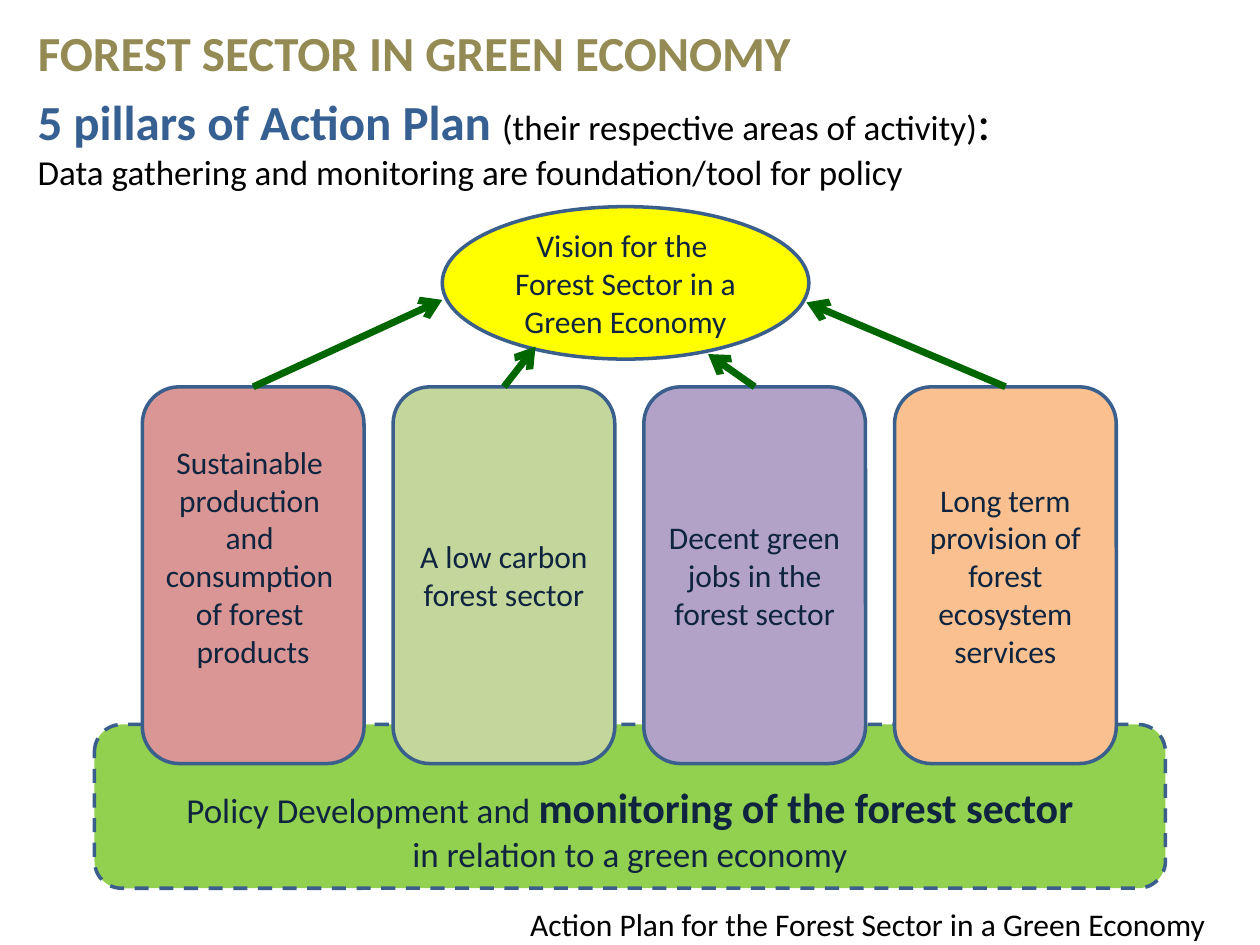
from lxml import etree
from pptx import Presentation
from pptx.dml.color import RGBColor
from pptx.enum.dml import MSO_LINE
from pptx.enum.shapes import MSO_CONNECTOR, MSO_SHAPE
from pptx.enum.text import MSO_ANCHOR, MSO_AUTO_SIZE, PP_ALIGN
from pptx.oxml.ns import qn
from pptx.util import Inches, Pt

LEFT, CENTER = PP_ALIGN.LEFT, PP_ALIGN.CENTER
TOP, MIDDLE = MSO_ANCHOR.TOP, MSO_ANCHOR.MIDDLE
STRAIGHT = MSO_CONNECTOR.STRAIGHT
ROUNDED, OVAL = MSO_SHAPE.ROUNDED_RECTANGLE, MSO_SHAPE.OVAL
FONT = "Calibri"
TITLE_ONLY = 5

COLORS = {
    "title": "948A54", "subtitle": "376092", "black": "000000",
    "navy": "0F243E", "outline": "3A5F8C", "arrow": "006600",
    "vision": "FFFF00", "foundation": "92D050",
    "production": "D99694", "carbon": "C3D69B",
    "jobs": "B3A2C7", "ecosystem": "FAC090",
}

# Pillar grid, in inches
PILLAR_LEFT, PILLAR_TOP = 1.13, 3.07
PILLAR_WIDTH, PILLAR_HEIGHT = 1.76, 2.99
PILLAR_PITCH = 1.99

# Colour, lines of text, arrow tip on the vision ellipse, bottom inset
PILLARS = [
    ("production", ["Sustainable ", "production ", "and ", "consumption ",
                    "of forest ", "products"], (3.51, 2.38), 0.35),
    ("carbon", ["A low carbon", "forest sector"], (4.25, 2.75), 0.05),
    ("jobs", ["Decent green", "jobs in the", "forest sector"],
     (5.62, 2.81), 0.05),
    ("ecosystem", ["Long term", "provision of", "forest", "ecosystem",
                   "services"], (6.4, 2.4), 0.05),
]


def rgb(name):
    return RGBColor.from_string(COLORS[name])


def write(frame, lines, size=18, color="navy", bold=False, align=CENTER,
          anchor=MIDDLE, insets=(0.1, 0.05, 0.1, 0.05)):
    """Each line is a string or a list of (text, overrides) runs."""
    frame.word_wrap = True
    frame.auto_size = MSO_AUTO_SIZE.NONE
    frame.vertical_anchor = anchor
    (frame.margin_left, frame.margin_top,
     frame.margin_right, frame.margin_bottom) = map(Inches, insets)
    for index, line in enumerate(lines):
        paragraph = frame.paragraphs[0] if index == 0 else frame.add_paragraph()
        paragraph.alignment = align
        for text, style in [(line, {})] if isinstance(line, str) else line:
            run = paragraph.add_run()
            run.text = text
            run.font.name = FONT
            run.font.size = Pt(style.get("size", size))
            run.font.bold = style.get("bold", bold)
            run.font.color.rgb = rgb(style.get("color", color))


def add_label(slide, box, lines, **style):
    label = slide.shapes.add_textbox(*map(Inches, box))
    write(label.text_frame, lines, align=LEFT, anchor=TOP, **style)


def add_block(slide, preset, box, fill, lines, **style):
    block = slide.shapes.add_shape(preset, *map(Inches, box))
    block.shadow.inherit = False
    block.fill.solid()
    block.fill.fore_color.rgb = rgb(fill)
    block.line.color.rgb = rgb("outline")
    block.line.width = Pt(2)
    write(block.text_frame, lines, **style)
    return block


def add_arrow(slide, pillar, tip):
    x, y = map(Inches, tip)
    arrow = slide.shapes.add_connector(STRAIGHT, 0, 0, x, y)
    arrow.begin_connect(pillar, 0)
    arrow.line.color.rgb = rgb("arrow")
    arrow.line.width = Pt(4)
    etree.SubElement(arrow.line._get_or_add_ln(), qn("a:tailEnd"), type="arrow")
    etree.SubElement(arrow._element.spPr, qn("a:effectLst"))


def main():
    deck = Presentation()
    deck.slide_width, deck.slide_height = Inches(10), Inches(7.5)
    slide = deck.slides.add_slide(deck.slide_layouts[TITLE_ONLY])

    # Heading
    title = slide.shapes.title
    title.left, title.top, title.width, title.height = map(
        Inches, (0.2, 0.13, 9.69, 0.57))
    write(title.text_frame, ["FOREST SECTOR IN GREEN ECONOMY"], size=28,
          color="title", bold=True, align=LEFT, anchor=TOP)
    add_label(slide, (0.2, 0.68, 9.69, 0.91), [
        [("5 pillars of Action Plan ",
          {"size": 28, "color": "subtitle", "bold": True}),
         ("(their respective areas of activity)", {}),
         (":", {"size": 28})],
        "Data gathering and monitoring are foundation/tool for policy",
    ], size=20, color="black")

    # Foundation and vision
    foundation = add_block(slide, ROUNDED, (0.75, 5.75, 8.5, 1.3), "foundation", [
        [("Policy Development and ", {}),
         ("monitoring of the forest sector", {"size": 24, "bold": True})],
        "in relation to a green economy",
    ], size=20, insets=(0.1, 0.39, 0.1, 0.05))
    foundation.line.dash_style = MSO_LINE.DASH
    add_block(slide, OVAL, (3.51, 1.64, 2.91, 1.21), "vision",
              ["Vision for the ", "Forest Sector in a Green Economy"],
              insets=(0, 0, 0, 0))

    # Pillars, each pointing to the vision
    for column, (fill, lines, tip, bottom) in enumerate(PILLARS):
        box = (PILLAR_LEFT + column * PILLAR_PITCH, PILLAR_TOP,
               PILLAR_WIDTH, PILLAR_HEIGHT)
        pillar = add_block(slide, ROUNDED, box, fill, lines,
                           insets=(0.1, 0.05, 0.1, bottom))
        add_arrow(slide, pillar, tip)

    # Footer
    add_label(slide, (4.11, 7.13, 5.89, 0.4),
              ["Action Plan for the Forest Sector in a Green Economy"],
              color="black")

    deck.save("out.pptx")


if __name__ == "__main__":
    main()
